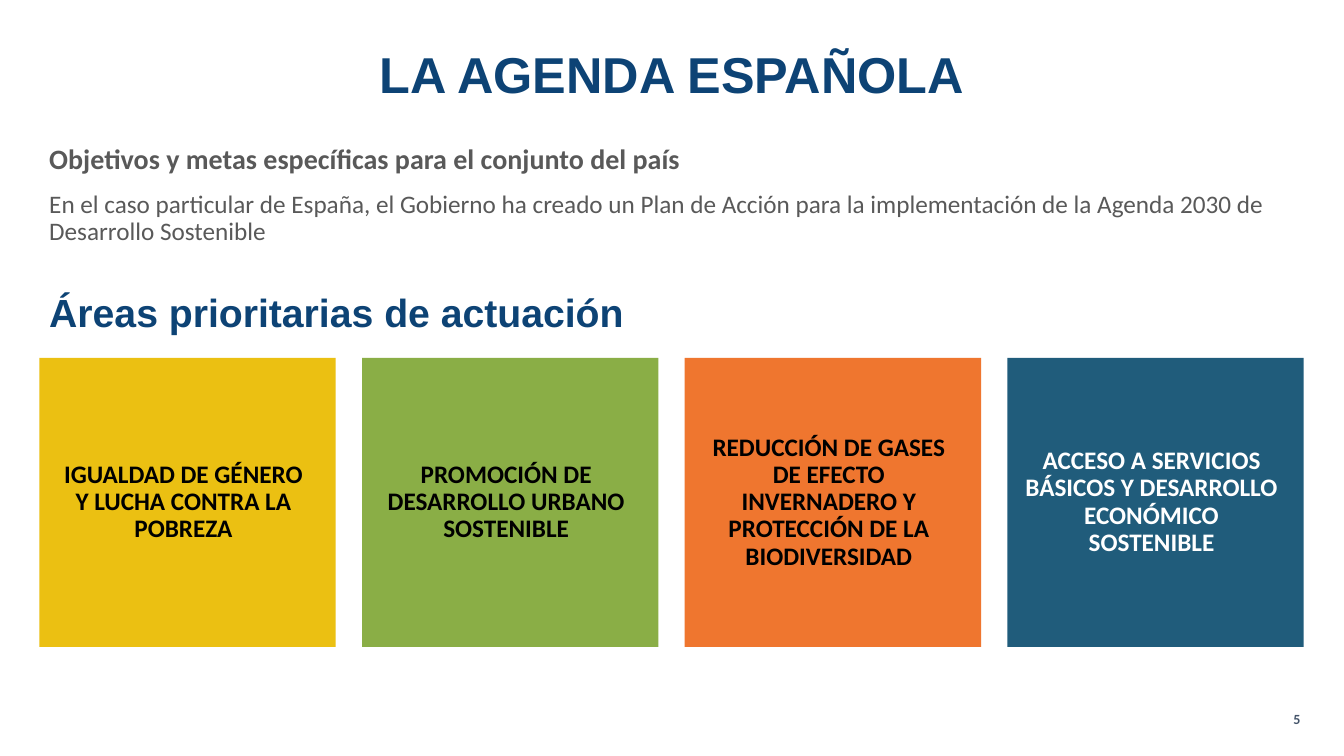
from pptx import Presentation
from pptx.dml.color import RGBColor
from pptx.enum.shapes import MSO_SHAPE as Shape
from pptx.enum.text import MSO_ANCHOR as Anchor, PP_ALIGN as Align
from pptx.util import Pt

NAVY = "0D4375"
GRAY = "595959"
AREAS = [
    ("IGUALDAD DE GÉNERO Y LUCHA CONTRA LA POBREZA", "EBC012", "000000"),
    ("PROMOCIÓN DE DESARROLLO URBANO SOSTENIBLE", "8AAE46", "000000"),
    ("REDUCCIÓN DE GASES DE EFECTO INVERNADERO Y PROTECCIÓN DE LA BIODIVERSIDAD",
     "EF762F", "000000"),
    ("ACCESO A SERVICIOS BÁSICOS Y DESARROLLO ECONÓMICO SOSTENIBLE",
     "205C7B", "FFFFFF"),
]
MARGIN = 28.1
TEXT_WIDTH = 931.7
CARD_TOP = 255.6
CARD_WIDTH = 211.7
CARD_HEIGHT = 206.6
CARD_PITCH = 230.5


def color(value):
    """Turn a hex string into a colour."""
    return RGBColor.from_string(value)


def write(shape, text, size, hex_color, font="Calibri", bold=True,
          align=Align.LEFT, anchor=Anchor.TOP, spacing=0.9):
    """Fill a shape with one formatted paragraph."""
    frame = shape.text_frame
    frame.text = text
    frame.word_wrap = True
    frame.vertical_anchor = anchor
    paragraph = frame.paragraphs[0]
    paragraph.alignment = align
    paragraph.line_spacing = spacing
    run_font = paragraph.runs[0].font
    run_font.name = font
    run_font.size = Pt(size)
    run_font.bold = bold
    run_font.color.rgb = color(hex_color)


def add_title(slide, text):
    """Place and format the title placeholder."""
    title = slide.shapes.title
    title.left, title.top, title.width, title.height = Pt(0), Pt(32.4), Pt(960), Pt(51.8)
    write(title, text, 36, NAVY, font="Arial", align=Align.CENTER)


def add_text(slide, text, left, top, width, height, size, hex_color, **style):
    """Add a text box."""
    box = slide.shapes.add_textbox(Pt(left), Pt(top), Pt(width), Pt(height))
    write(box, text, size, hex_color, **style)


def add_card(slide, index, text, fill, text_color):
    """Add the coloured card of one priority area."""
    card = slide.shapes.add_shape(
        Shape.RECTANGLE, Pt(MARGIN + index * CARD_PITCH), Pt(CARD_TOP),
        Pt(CARD_WIDTH), Pt(CARD_HEIGHT))
    card.shadow.inherit = False
    card.fill.solid()
    card.fill.fore_color.rgb = color(fill)
    card.line.fill.background()
    frame = card.text_frame
    frame.margin_left = Pt(11.5)
    frame.margin_top = frame.margin_right = frame.margin_bottom = Pt(17.3)
    write(card, text, 18, text_color, align=Align.CENTER, anchor=Anchor.MIDDLE)


def main():
    """Build the slide and save it."""
    presentation = Presentation()
    presentation.slide_width = Pt(960)
    presentation.slide_height = Pt(540)
    slide = presentation.slides.add_slide(presentation.slide_layouts[5])
    add_title(slide, "LA AGENDA ESPAÑOLA")
    add_text(slide, "Objetivos y metas específicas para el conjunto del país",
             MARGIN, 100.1, TEXT_WIDTH, 51.8, 20, GRAY)
    add_text(slide, "En el caso particular de España, el Gobierno ha creado un Plan de "
             "Acción para la implementación de la Agenda 2030 de Desarrollo Sostenible",
             MARGIN, 133.2, TEXT_WIDTH, 37.4, 18, GRAY, bold=False)
    add_text(slide, "Áreas prioritarias de actuación",
             MARGIN, 205.9, TEXT_WIDTH, 33.8, 28, NAVY, font="Arial")
    for index, area in enumerate(AREAS):
        add_card(slide, index, *area)
    add_text(slide, "5", 900.7, 504, 35.3, 19.4, 10, "44546A",
             align=Align.RIGHT, spacing=1.0)
    presentation.save("out.pptx")


if __name__ == "__main__":
    main()
